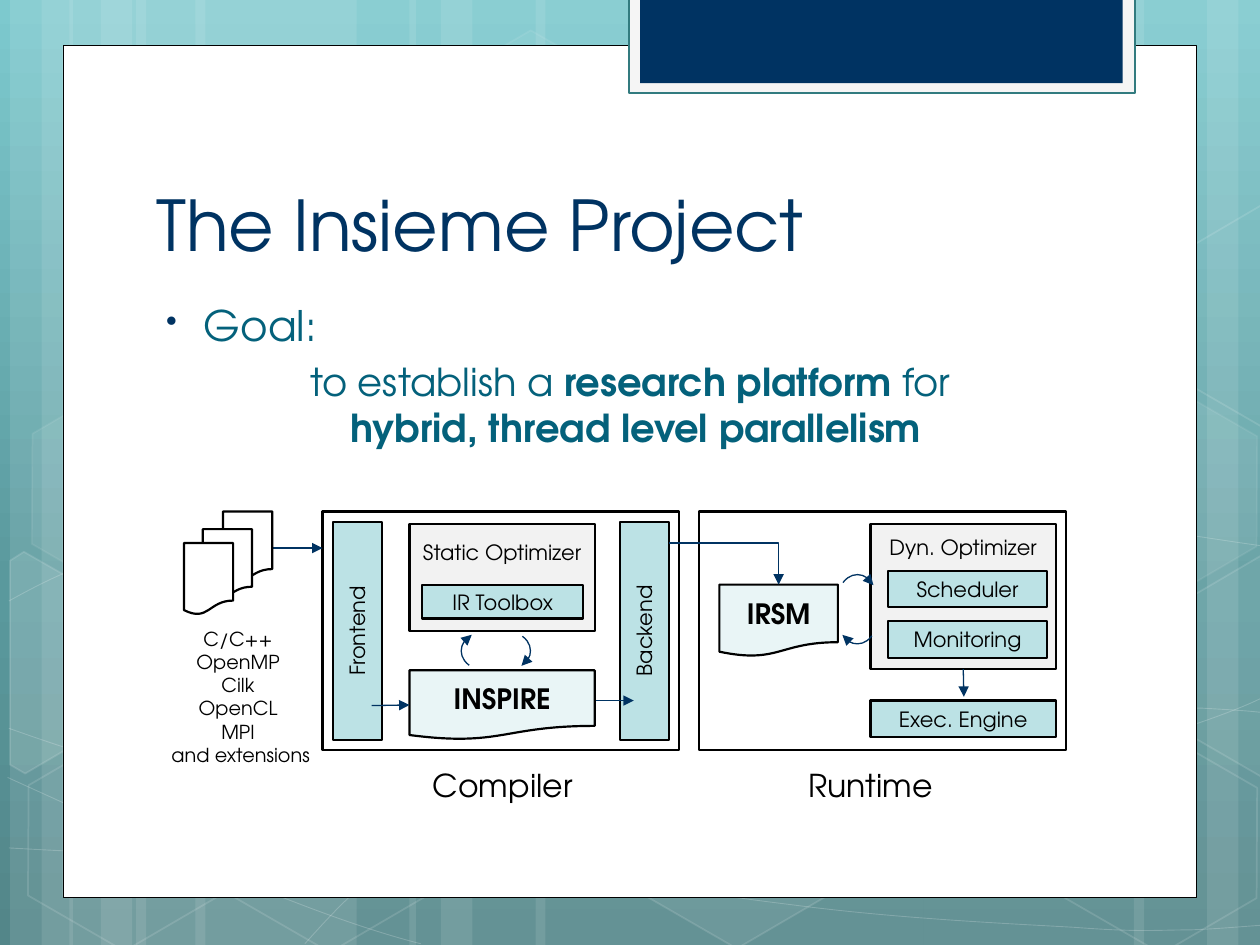
"""Build the Insieme Project slide: goal statement and compiler/runtime diagram."""
from copy import deepcopy
from lxml import etree
from pptx import Presentation
from pptx import util as u
from pptx.dml.color import RGBColor
from pptx.enum import shapes, text
from pptx.oxml import ns


class Theme:
    font = "TeX Gyre Adventor"
    navy, teal, edge, panel, white, black = "003362", "04617B", "327B7F", "F5F5F5", "FFFFFF", "000000"
    block, document, optimizer = "BCE2E5", "E9F5F6", "F2F2F2"
    background = [(0, "7DC9CE"), (0.62, "5A999D"), (1, "538689")]
    title, goal, detail, caption, ir, label, inputs = 40, 24, 22, 18, 16, 12, 11
    outline, arrow = 1.25, 0.75


KIND, ALIGN, ANCHOR = shapes.MSO_SHAPE, text.PP_ALIGN, text.MSO_ANCHOR
TITLE, GOAL = "The Insieme Project", "Goal:"
DETAIL = [("to establish a ", False), ("research platform", True), (" for \v", False),
          ("hybrid, thread level parallelism", True)]
STRIPS = [(1.08, 1.75), (0.08, 0.5), (0.33, 0.83), (1.55, 1.75), (0.55, 0.5), (0.8, 0.83),
          (7.33, 1.75), (9.58, 0.5), (9, 0.83), (4.25, 3.08), (3.25, 0.5), (3.5, 0.83)]
CURVES = [
    [(0.07, 6.73), (0.61, 6.76), (1.15, 6.79), (1.9, 6.78), (2.65, 6.77), (3.58, 6.75), (4.58, 6.65),
     (5.58, 6.55), (7, 6.36), (7.92, 6.17), (8.83, 5.98), (9.77, 5.68), (10.07, 5.51)],
    [(0.07, 4.77), (0.36, 4.61), (0.65, 4.46), (1.21, 4.31), (1.78, 4.16), (2.59, 3.94), (3.47, 3.87),
     (4.36, 3.8), (5.44, 3.79), (6.54, 3.87), (7.64, 3.95), (9.47, 4.26), (10.07, 4.34)],
    [(0.06, 6.17), (1.27, 6.72), (2.47, 7.27), (3.34, 7.49)],
    [(0.07, 5.78), (0.38, 5.89), (0.7, 6), (1.28, 6.16), (1.86, 6.31), (2.73, 6.56), (3.57, 6.73),
     (4.4, 6.9), (5.45, 7.08), (6.28, 7.18), (7.11, 7.29), (8, 7.33), (8.53, 7.36),
     (9.05, 7.4), (9.19, 7.38), (9.45, 7.38), (9.71, 7.37), (9.89, 7.35), (10.07, 7.34)],
    [(2.42, 7.49), (2.6, 7.29), (2.78, 7.09), (3.02, 6.91), (3.26, 6.73), (3.6, 6.53), (3.88, 6.39),
     (4.16, 6.25), (4.33, 6.19), (4.7, 6.09), (5.06, 5.99), (5.73, 5.85), (6.08, 5.78),
     (6.44, 5.71), (6.49, 5.71), (6.8, 5.69), (7.11, 5.66), (7.6, 5.63), (7.94, 5.62),
     (8.29, 5.61), (8.86, 5.62), (8.86, 5.62), (8.86, 5.62), (9.53, 5.62), (9.53, 5.62),
     (9.71, 5.63), (9.88, 5.64), (9.97, 5.65), (10.06, 5.66), (10.03, 5.65), (10.06, 5.66)]]
HEXAGONS = [(3.34, 0.36, 4, 8), (4.97, 5.89, 6, 12), (0.11, 5.91, 0, 12), (0.14, 3.12, 7, 8),
            (1.74, 5.92, 0, 12), (7.53, 4.53, 10, 12), (8.34, 5.93, 0, 12), (8.34, 3.14, 7, 8)]
CUT_HEXAGONS = [
    ([(0.08, 4.45), (0.19, 4.38), (0.96, 4.82), (0.95, 5.7), (0.2, 6.14), (0.08, 6.07)], 10),
    ([(9.26, 4.85), (10.01, 4.41), (10.09, 4.46), (10.09, 6.13), (10.02, 6.17), (9.26, 5.73)], 4),
    ([(9.26, 2.07), (10.01, 1.63), (10.1, 1.68), (10.09, 3.35), (10.02, 3.39), (9.26, 2.95)], 0)]
FRAMES = [((0.5, 0.36, 9, 6.76), Theme.white, Theme.black, 0.5),
          ((4.99, -0.02, 4.02, 0.76), Theme.panel, Theme.edge, 1.25),
          ((5.08, -0.02, 3.83, 0.68), Theme.navy, None, 0)]
STAGES = [(5.55, 4.06, 2.91, 1.89), (2.56, 4.06, 2.83, 1.89)]
SIDE_BARS = [("Frontend", 1.97), ("Backend", 4.25)]
OPTIMIZERS = [("Static Optimizer", (3.25, 4.16, 1.47, 0.85), 0.12),
              ("Dyn. Optimizer", (6.91, 4.16, 1.47, 1.15), 0.08)]
BLOCKS = [("IR Toolbox", (3.35, 4.64, 1.28, 0.27)), ("Scheduler", (7.05, 4.53, 1.26, 0.29)),
          ("Monitoring", (7.05, 4.93, 1.26, 0.29)), ("Exec. Engine", (6.91, 5.56, 1.47, 0.29))]
DOCUMENTS = [("INSPIRE", (3.25, 5.32, 1.47, 0.55)), ("IRSM", (5.71, 4.64, 0.94, 0.57))]
SOURCES = [(1.77, 4.06), (1.61, 4.2), (1.46, 4.31)]
LABELS = [("C/C++\nOpenMP\nCilk\nOpenCL\nMPI\n and extensions", (1.21, 4.93, 1.36, 1.21), Theme.inputs),
          ("Compiler", (3.33, 6.03, 1.32, 0.4), Theme.caption),
          ("Runtime", (6.31, 6.03, 1.2, 0.4), Theme.caption)]
CYCLES = [(3.82, 5.01, 0, 26.42), (3.66, 5.01, 180, 29.34), (6.61, 4.76, 90, 26.42), (6.61, 4.6, 270, 29.34)]


def inches(values):
    return [u.Inches(value) for value in values]


def add_xml(parent, tag, **attributes):
    return etree.SubElement(parent, ns.qn(tag), attributes)


def paint(shape, fill=None, line=None, width=1, fill_alpha=100, line_alpha=100):
    shape.shadow.inherit = False
    for target, color in ((shape.fill, fill), (shape.line.fill, line)):
        if color:
            target.solid()
            target.fore_color.rgb = RGBColor.from_string(color)
        else:
            target.background()
    if line:
        shape.line.width = u.Pt(width)
    for place, alpha in (("a:solidFill", fill_alpha), ("a:ln/a:solidFill", line_alpha)):
        for color in shape.element.spPr.xpath(f"./{place}/a:srgbClr") if alpha < 100 else []:
            add_xml(color, "a:alpha", val=str(alpha * 1000))
    return shape


def style(paragraph, size, color=Theme.black, bold=None, align=ALIGN.CENTER):
    paragraph.alignment = align
    paragraph.font.name, paragraph.font.size, paragraph.font.bold = Theme.font, u.Pt(size), bold
    paragraph.font.color.rgb = RGBColor.from_string(color)


def write(shape, words, size, bold=None, anchor=ANCHOR.MIDDLE, top=0.05):
    frame = shape.text_frame
    frame.word_wrap, frame.vertical_anchor = True, anchor
    frame.margin_left, frame.margin_right, frame.margin_top = inches((0, 0, top))
    frame.text = words
    for paragraph in frame.paragraphs:
        style(paragraph, size, bold=bold)


def add_box(slide, kind, place, fill, line=Theme.black, width=Theme.outline, **alphas):
    return paint(slide.shapes.add_shape(kind, *inches(place)), fill, line, width, **alphas)


def add_outline(slide, points, curved=False):
    points = [inches(point) for point in points]
    builder = slide.shapes.build_freeform(*points[0])
    builder.add_line_segments(points[1:], close=not curved)
    shape = builder.convert_to_shape()
    segments = shape.element.xpath(".//a:lnTo") if curved else []
    for first in range(0, len(segments), 3):
        curve = add_xml(segments[first].getparent(), "a:cubicBezTo")
        for segment in segments[first:first + 3]:
            curve.append(segment[0])
            segment.getparent().remove(segment)
    return shape


def add_arrow(slide, start, end, source=None, target=None, kind=shapes.MSO_CONNECTOR.STRAIGHT):
    connector = slide.shapes.add_connector(kind, *inches(start + end))
    if source:
        connector.begin_connect(*source)
    if target:
        connector.end_connect(*target)
    connector.line.color.rgb, connector.line.width = RGBColor.from_string(Theme.navy), u.Pt(Theme.arrow)
    add_xml(connector.element.spPr.find(ns.qn("a:ln")), "a:tailEnd", type="triangle")
    add_xml(connector.element.spPr, "a:effectLst")
    return connector


def draw_backdrop(slide):
    fill = slide.background.fill
    fill.gradient()
    fill.gradient_angle = 270
    stops = slide.element.xpath(".//a:gsLst")[0]
    stops.insert(1, deepcopy(stops[0]))
    for stop, (position, color) in zip(fill.gradient_stops, Theme.background):
        stop.position, stop.color.rgb = position, RGBColor.from_string(color)
    for left, width in STRIPS:
        add_box(slide, KIND.RECTANGLE, (left, 0, width, 7.5), Theme.white, None, fill_alpha=10)
    for curve in CURVES:
        paint(add_outline(slide, curve, curved=True), None, Theme.white, 0.5, line_alpha=20)
    for left, top, alpha, line_alpha in HEXAGONS:
        hexagon = add_box(slide, KIND.HEXAGON, (left, top, 1.75, 1.52), Theme.white if alpha else None,
                          Theme.white, 1, fill_alpha=alpha, line_alpha=line_alpha)
        hexagon.adjustments[0], hexagon.rotation = 0.285, 30
    for points, alpha in CUT_HEXAGONS:
        paint(add_outline(slide, points), Theme.white if alpha else None, Theme.white, 1, alpha, 12)
    for place, *colors in FRAMES:
        add_box(slide, KIND.RECTANGLE, place, *colors)


def write_heading(slide):
    title = slide.shapes.title
    title.element.getparent().append(title.element)
    title.left, title.top, title.width, title.height = inches((1.14, 0.91, 7.68, 1.25))
    title.text_frame.text, title.text_frame.vertical_anchor = TITLE, ANCHOR.BOTTOM
    title.text_frame.auto_size = text.MSO_AUTO_SIZE.NONE
    style(title.text_frame.paragraphs[0], Theme.title, Theme.navy, align=ALIGN.LEFT)
    body = slide.shapes.add_textbox(*inches((1.14, 2.33, 7.41, 4.05)))
    body.text_frame.word_wrap = True
    goal, detail = body.text_frame.paragraphs[0], body.text_frame.add_paragraph()
    goal.text, detail.text = GOAL, ""
    for words, bold in DETAIL:
        run = detail.add_run()
        run.text, run.font.bold = words.rstrip("\v"), bold
        if words.endswith("\v"):
            detail.add_line_break()
    for paragraph, size, align in ((goal, Theme.goal, ALIGN.LEFT), (detail, Theme.detail, ALIGN.CENTER)):
        style(paragraph, size, Theme.teal, align=align)
        paragraph.space_before = u.Pt(size * 0.2)
    properties = body.element.xpath(".//a:pPr")
    for item, margin, indent in zip(properties, (0.38, 0.4), (-0.3, 0)):
        item.set("marL", str(u.Inches(margin)))
        item.set("indent", str(u.Inches(indent)))
    defaults = properties[0].find(ns.qn("a:defRPr"))
    add_xml(add_xml(properties[0], "a:buClr"), "a:srgbClr", val=Theme.navy)
    add_xml(properties[0], "a:buSzPct", val="76000")
    add_xml(properties[0], "a:buChar", char="•")
    properties[0].append(defaults)


def draw_diagram(slide):
    for place in STAGES:
        add_box(slide, KIND.RECTANGLE, place, Theme.white)
    for name, left in SIDE_BARS:
        bar = add_box(slide, KIND.RECTANGLE, (left, 4.81, 1.73, 0.39), Theme.block)
        bar.rotation = 270
        write(bar, name, Theme.label)
    nodes = {}
    for name, place, top in OPTIMIZERS:
        nodes[name] = add_box(slide, KIND.RECTANGLE, place, Theme.optimizer)
        write(nodes[name], name, Theme.label, anchor=ANCHOR.TOP, top=top)
    for group, kind, fill, size, bold in ((BLOCKS, KIND.RECTANGLE, Theme.block, Theme.label, None),
                                          (DOCUMENTS, KIND.FLOWCHART_DOCUMENT, Theme.document, Theme.ir, True)):
        for name, place in group:
            nodes[name] = add_box(slide, kind, place, fill)
            write(nodes[name], name, size, bold)
    for words, place, size in LABELS:
        write(slide.shapes.add_textbox(*inches(place)), words, size, anchor=ANCHOR.TOP)
    for left, top, rotation, end in CYCLES:
        arc = add_box(slide, KIND.ARC, (left, top, 0.39, 0.31), None, Theme.navy, Theme.arrow)
        arc.adjustments[0], arc.adjustments[1], arc.rotation = 191.3, end, rotation
        add_xml(arc.element.spPr.find(ns.qn("a:ln")), "a:tailEnd", type="triangle")
    add_arrow(slide, (1.96, 4.35), (2.56, 4.35))
    add_arrow(slide, (2.95, 5.6), (3.25, 5.6), target=(nodes["INSPIRE"], 1))
    add_arrow(slide, (4.73, 5.56), (5.03, 5.56))
    add_arrow(slide, (7.65, 5.31), (7.65, 5.53), source=(nodes["Dyn. Optimizer"], 2))
    bent = add_arrow(slide, (5.31, 4.31), (6.18, 4.64), None, (nodes["IRSM"], 0), shapes.MSO_CONNECTOR.ELBOW)
    bent.element.spPr.find(ns.qn("a:prstGeom")).set("prst", "bentConnector2")
    for left, top in SOURCES:
        add_box(slide, KIND.FLOWCHART_DOCUMENT, (left, top, 0.39, 0.57), Theme.white)


presentation = Presentation()
presentation.slide_width, presentation.slide_height = inches((10, 7.5))
insieme_slide = presentation.slides.add_slide(presentation.slide_layouts[5])
for build in (draw_backdrop, write_heading, draw_diagram):
    build(insieme_slide)
presentation.save("out.pptx")
